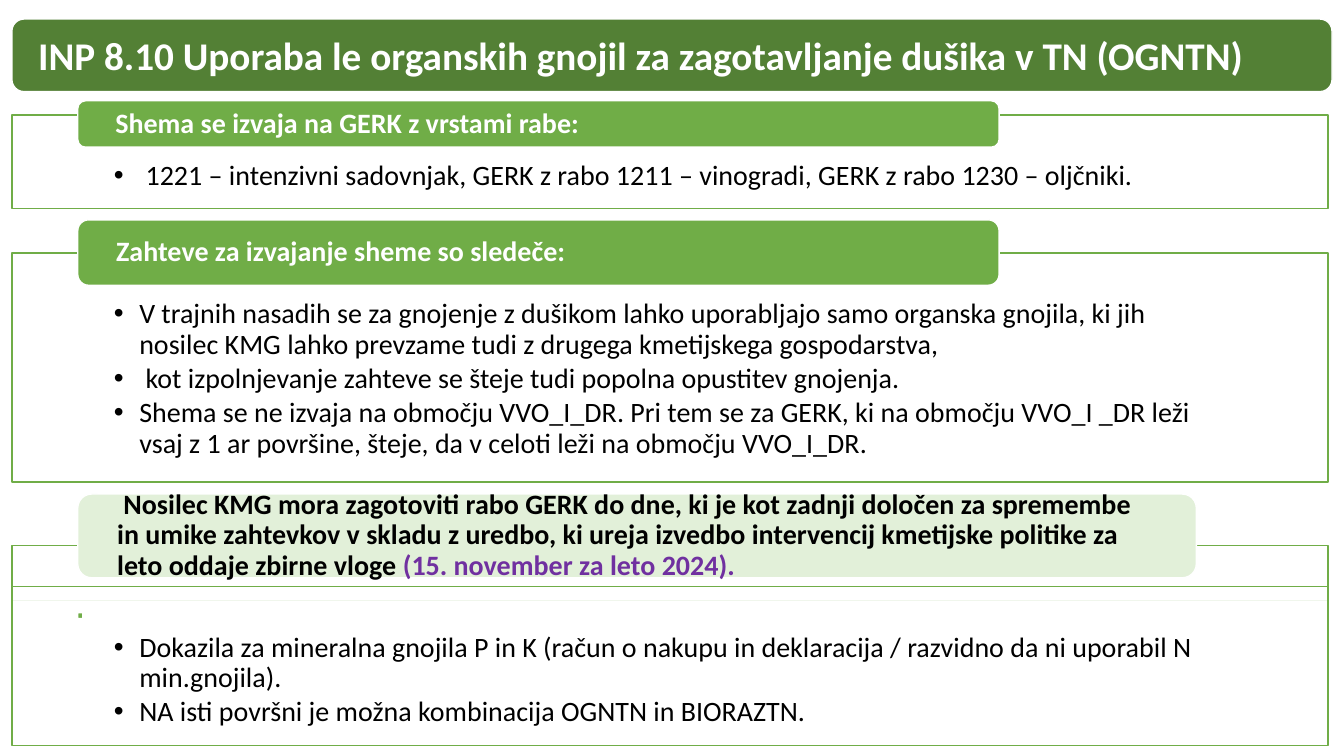
from lxml import etree
from pptx import Presentation
from pptx.dml.color import RGBColor
from pptx.enum.shapes import MSO_SHAPE as Preset
from pptx.enum.text import MSO_ANCHOR as Anchor, MSO_AUTO_SIZE as AutoSize, PP_ALIGN as Align
from pptx.oxml.ns import qn
from pptx.util import Cm, Pt

COLOURS = {
    "white": "FFFFFF",
    "black": "000000",
    "green": "70AD47",
    "dark green": "538035",
    "pale green": "E2F0D9",
    "purple": "7030A0",
}
PANEL_LEFT, PANEL_WIDTH = 0.3, 33.17
PILL_LEFT, PILL_WIDTH = 1.96, 23.22

TITLE = " INP 8.10 Uporaba le organskih gnojil za zagotavljanje dušika v TN (OGNTN)"
LAND_USES = [
    " 1221 – intenzivni sadovnjak, GERK z rabo 1211 – vinogradi, GERK z rabo 1230 – oljčniki.",
]
REQUIREMENTS = [
    "V trajnih nasadih se za gnojenje z dušikom lahko uporabljajo samo organska gnojila, "
    "ki jih nosilec KMG lahko prevzame tudi z drugega kmetijskega gospodarstva,",
    " kot izpolnjevanje zahteve se šteje tudi popolna opustitev gnojenja.",
    "Shema se ne izvaja na območju VVO_I_DR. Pri tem se za GERK, ki na območju VVO_I _DR "
    "leži vsaj z 1 ar površine, šteje, da v celoti leži na območju VVO_I_DR.",
]
DEADLINE = (
    " Nosilec KMG mora zagotoviti rabo GERK do dne, ki je kot zadnji določen za spremembe "
    "in umike zahtevkov v skladu z uredbo, ki ureja izvedbo intervencij kmetijske politike "
    "za leto oddaje zbirne vloge "
)
DEADLINE_DATE = "(15. november za leto 2024)."
EVIDENCE = [
    "Dokazila za mineralna gnojila P in K (račun o nakupu in deklaracija / "
    "razvidno da ni uporabil N min.gnojila).",
    "NA isti površni je možna kombinacija OGNTN in BIORAZTN.",
]


def rgb(name):
    return RGBColor.from_string(COLOURS[name])


def place(shape, left, top, width, height):
    shape.left, shape.top = Cm(left), Cm(top)
    shape.width, shape.height = Cm(width), Cm(height)


def bring_to_front(shape):
    shape.element.getparent().append(shape.element)


def paint(shape, fill, line):
    shape.shadow.inherit = False
    shape.fill.solid()
    shape.fill.fore_color.rgb = rgb(fill)
    shape.line.color.rgb = rgb(line)
    shape.line.width = Pt(1)


def paint_panel(shape):
    """Give a panel its green outline and its 90 % opaque white fill."""
    paint(shape, "white", "green")
    colour = shape.element.spPr.find(qn("a:solidFill")).find(qn("a:srgbClr"))
    etree.SubElement(colour, qn("a:alpha"), val="90000")


def format_frame(frame, anchor, left, top, right, bottom):
    frame.word_wrap = True
    frame.auto_size = AutoSize.NONE
    frame.vertical_anchor = anchor
    frame.margin_left, frame.margin_top = Cm(left), Cm(top)
    frame.margin_right, frame.margin_bottom = Cm(right), Cm(bottom)


def format_para(para, colour, size=20, bold=True):
    para.alignment = Align.LEFT
    para.line_spacing = 0.9
    para.space_before = Pt(0)
    para.font.name = "Calibri"
    para.font.size = Pt(size)
    para.font.bold = bold
    para.font.color.rgb = rgb(colour)


def add_bullet(para):
    props = para._p.get_or_add_pPr()
    props.set("marL", str(Cm(0.64)))
    props.set("indent", str(Cm(-0.64)))
    etree.SubElement(props, qn("a:buChar"), char="•")


def add_pill(page, left, top, width, height, fill):
    pill = page.shapes.add_shape(
        Preset.ROUNDED_RECTANGLE, Cm(left), Cm(top), Cm(width), Cm(height))
    paint(pill, fill, "white")
    return pill


def add_heading(page, top, height, text, fill="green", colour="white", width=PILL_WIDTH):
    pill = add_pill(page, PILL_LEFT, top, width, height, fill)
    format_frame(pill.text_frame, Anchor.MIDDLE, 0.89, 0, 0.89, 0)
    para = pill.text_frame.paragraphs[0]
    para.add_run().text = text
    format_para(para, colour)
    return para


def add_empty_panel(page, top, height):
    panel = page.shapes.add_shape(
        Preset.RECTANGLE, Cm(PANEL_LEFT), Cm(top), Cm(PANEL_WIDTH), Cm(height))
    paint_panel(panel)


def fill_list_panel(panel, top, height, items):
    """Turn a body placeholder into an outlined panel with a bulleted list."""
    place(panel, PANEL_LEFT, top, PANEL_WIDTH, height)
    bring_to_front(panel)
    paint_panel(panel)
    frame = panel.text_frame
    format_frame(frame, Anchor.TOP, 2.57, 1.17, 2.57, 0.41)
    for number, item in enumerate(items):
        para = frame.add_paragraph() if number else frame.paragraphs[0]
        para.text = item
        para.level = 1
        add_bullet(para)
        format_para(para, "black", bold=False)
        para.space_after = Pt(3)


def fill_title(page):
    add_pill(page, 0.3, 0.48, 33.27, 1.83, "dark green")
    title = page.shapes.title
    place(title, 0.41, 0.61, 33.05, 1.7)
    bring_to_front(title)
    format_frame(title.text_frame, Anchor.MIDDLE, 0.33, 0.33, 0.33, 0.33)
    para = title.text_frame.paragraphs[0]
    para.text = TITLE
    format_para(para, "white", size=28)


def main():
    deck = Presentation()
    deck.slide_width, deck.slide_height = Cm(33.87), Cm(19.05)
    page = deck.slides.add_slide(deck.slide_layouts.get_by_name("Comparison"))
    _, spare, land_uses, requirements, evidence = page.placeholders
    spare.element.getparent().remove(spare.element)

    fill_list_panel(land_uses, 2.9, 2.36, LAND_USES)
    add_heading(page, 2.54, 1.17, "Shema se izvaja na GERK z vrstami rabe:")

    fill_list_panel(requirements, 6.38, 5.77, REQUIREMENTS)
    add_heading(page, 5.54, 1.65, "Zahteve za izvajanje sheme so sledeče:")

    add_empty_panel(page, 13.74, 1.4)
    deadline = add_heading(page, 12.45, 2.11, DEADLINE, "pale green", "black", 28.19)
    date = deadline.add_run()
    date.text = DEADLINE_DATE
    date.font.color.rgb = rgb("purple")

    fill_list_panel(evidence, 14.78, 4.01, EVIDENCE)
    add_pill(page, PILL_LEFT, 15.44, 0.13, 0.15, "green")

    fill_title(page)
    deck.save("out.pptx")


if __name__ == "__main__":
    main()
